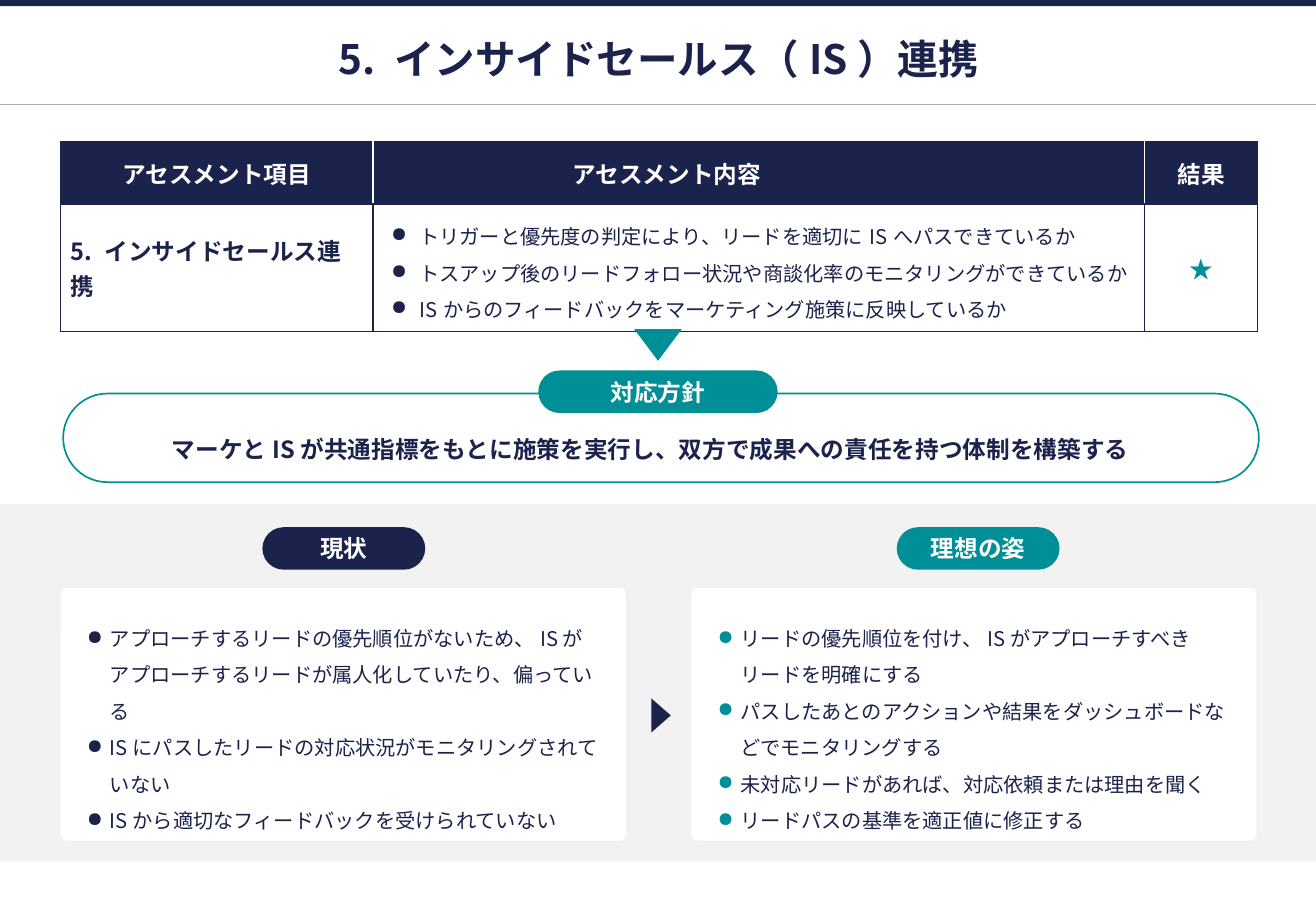
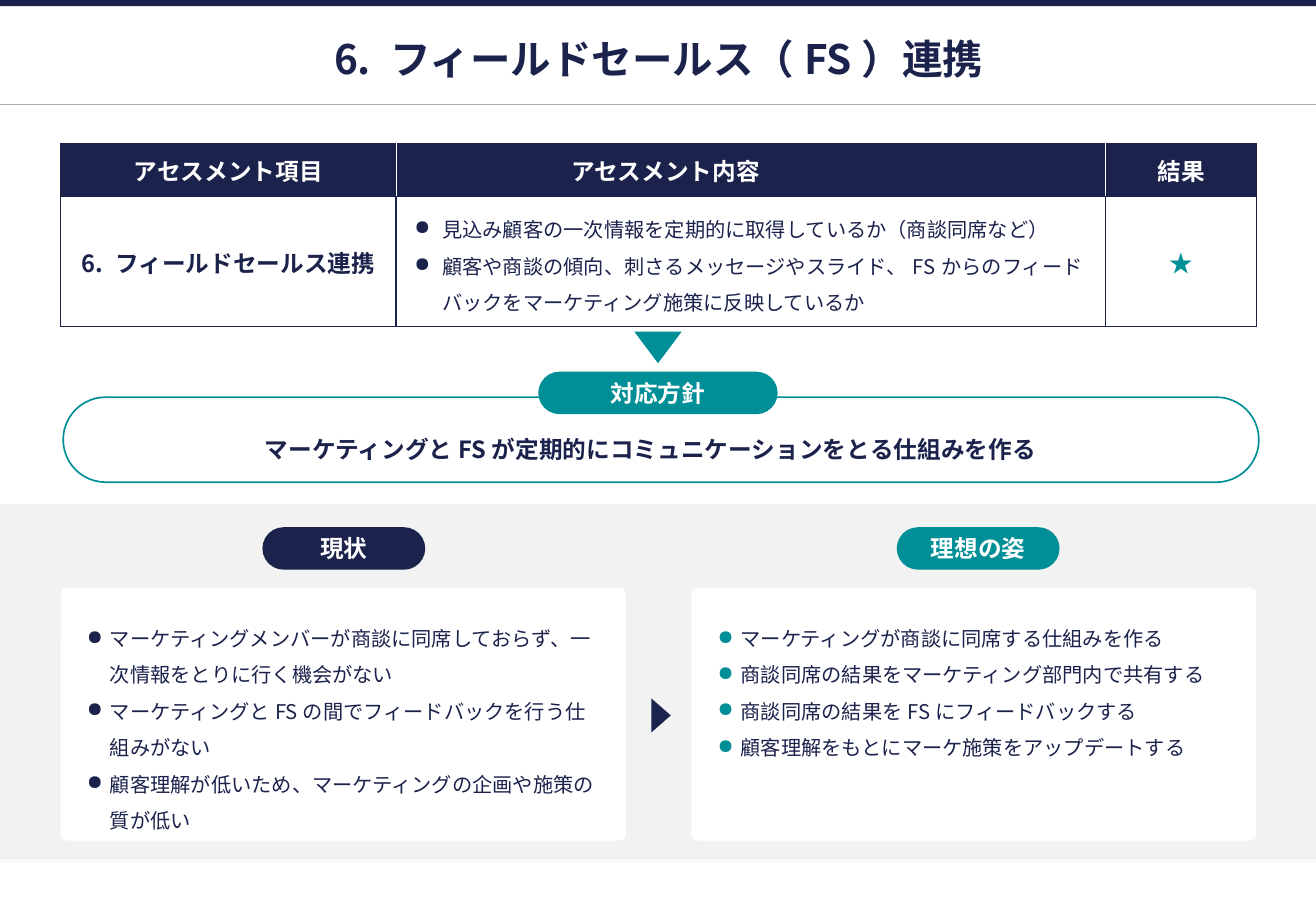
from lxml import etree
from pptx import Presentation, util as u
from pptx.dml.color import RGBColor
from pptx.enum import shapes, text
from pptx.oxml.ns import qn

# Shared style; 100 px make one inch
SCALE = 9144
WIDTH, HEIGHT = 1083, 750
FONT = "Noto Sans CJK JP"
COLORS = {"navy": "1B224C", "teal": "008F96", "white": "FFFFFF",
          "band": "F2F2F2", "rule": "AFAFAF"}
KIND = shapes.MSO_SHAPE
ALIGN = text.PP_ALIGN
ANCHOR = text.MSO_ANCHOR

SLIDES = [
    {
        "title": "5. インサイドセールス（IS）連携",
        "table_top": 117, "columns": [257, 635, 93], "rows": [51, 105],
        "heading_indent": 156,
        "item": "5. インサイドセールス連携", "item_align": ALIGN.LEFT,
        "checks": ["トリガーと優先度の判定により、リードを適切にISへパスできているか",
                   "トスアップ後のリードフォロー状況や商談化率のモニタリングができているか",
                   "ISからのフィードバックをマーケティング施策に反映しているか"],
        "arrow_top": 271, "label_top": 305, "policy_top": 324,
        "policy": "マーケとISが共通指標をもとに施策を実行し、双方で成果への責任を持つ体制を構築する",
        "current": ["アプローチするリードの優先順位がないため、ISがアプローチするリードが属人化していたり、偏っている",
                    "ISにパスしたリードの対応状況がモニタリングされていない",
                    "ISから適切なフィードバックを受けられていない"],
        "ideal": ["リードの優先順位を付け、ISがアプローチすべきリードを明確にする",
                  "パスしたあとのアクションや結果をダッシュボードなどでモニタリングする",
                  "未対応リードがあれば、対応依頼または理由を聞く",
                  "リードパスの基準を適正値に修正する"],
    },
    {
        "title": "6. フィールドセールス（FS）連携",
        "table_top": 118, "columns": [276, 584, 124], "rows": [44, 107],
        "heading_indent": 136,
        "item": "6. フィールドセールス連携", "item_align": ALIGN.CENTER,
        "checks": ["見込み顧客の一次情報を定期的に取得しているか（商談同席など）",
                   "顧客や商談の傾向、刺さるメッセージやスライド、FSからのフィードバックをマーケティング施策に反映しているか"],
        "arrow_top": 273, "label_top": 306, "policy_top": 327,
        "policy": "マーケティングとFSが定期的にコミュニケーションをとる仕組みを作る",
        "current": ["マーケティングメンバーが商談に同席しておらず、一次情報をとりに行く機会がない",
                    "マーケティングとFSの間でフィードバックを行う仕組みがない",
                    "顧客理解が低いため、マーケティングの企画や施策の質が低い"],
        "ideal": ["マーケティングが商談に同席する仕組みを作る",
                  "商談同席の結果をマーケティング部門内で共有する",
                  "商談同席の結果をFSにフィードバックする",
                  "顧客理解をもとにマーケ施策をアップデートする"],
    },
]


def px(length):
    return u.Emu(length * SCALE)


def rgb(color):
    return RGBColor.from_string(COLORS[color])


# Text
def add_bullet(properties, color):
    bullet_color = etree.SubElement(properties, qn("a:buClr"))
    etree.SubElement(bullet_color, qn("a:srgbClr"), val=COLORS[color])
    etree.SubElement(properties, qn("a:buChar"), char="●")


def write_text(frame, lines, *, size=14, color="navy", bold=True, align=ALIGN.LEFT,
               bullet=None, indent=0, hanging=0, spacing=None):
    """Write one paragraph per line into a text frame."""
    for index, line in enumerate(lines):
        paragraph = frame.paragraphs[0] if index == 0 else frame.add_paragraph()
        paragraph.alignment = align
        properties = paragraph._p.get_or_add_pPr()
        properties.set("marL", str(px(indent)))
        properties.set("indent", str(px(-hanging)))
        if bullet:
            add_bullet(properties, bullet)
        if spacing:
            paragraph.line_spacing = spacing
        run = paragraph.add_run()
        run.text = line
        run.font.name = FONT
        run.font.size = u.Pt(size)
        run.font.bold = bold
        run.font.color.rgb = rgb(color)
        etree.SubElement(run._r.get_or_add_rPr(), qn("a:ea"), typeface=FONT)


def set_frame(frame, margins, anchor=ANCHOR.MIDDLE):
    frame.word_wrap = True
    frame.vertical_anchor = anchor
    (frame.margin_left, frame.margin_top,
     frame.margin_right, frame.margin_bottom) = map(px, margins)


def add_text(slide, box, line, margins, **style):
    frame = slide.shapes.add_textbox(*map(px, box)).text_frame
    set_frame(frame, margins)
    write_text(frame, [line], align=ALIGN.CENTER, **style)


# Shapes and lines
def add_shape(slide, kind, box, fill, *, line=None, radius=None, rotation=0):
    shape = slide.shapes.add_shape(kind, *map(px, box))
    shape.shadow.inherit = False
    shape.fill.solid()
    shape.fill.fore_color.rgb = rgb(fill)
    if line:
        shape.line.color.rgb = rgb(line)
        shape.line.width = u.Pt(1)
    else:
        shape.line.fill.background()
    if radius is not None:
        shape.adjustments[0] = radius
    shape.rotation = rotation
    return shape


def add_rule(slide, top, color):
    rule = slide.shapes.add_connector(shapes.MSO_CONNECTOR.STRAIGHT,
                                      0, px(top), px(WIDTH), px(top))
    rule.line.color.rgb = rgb(color)
    rule.line.width = u.Pt(0.75)
    etree.SubElement(rule._element.spPr, qn("a:effectLst"))


def add_pill(slide, box, label, fill):
    pill = add_shape(slide, KIND.ROUNDED_RECTANGLE, box, fill, radius=0.5)
    set_frame(pill.text_frame, (10, 5, 10, 5))
    write_text(pill.text_frame, [label], color="white", align=ALIGN.CENTER)


def add_card(slide, left, lines, bullet):
    card = add_shape(slide, KIND.ROUNDED_RECTANGLE, (left, 484, 465, 208),
                     "white", radius=0.024)
    set_frame(card.text_frame, (20, 20, 20, 20), ANCHOR.TOP)
    write_text(card.text_frame, lines, size=12, bold=False, bullet=bullet,
               indent=19, hanging=19, spacing=1.5)


# Table
def set_borders(cell, colors):
    """Colours come in the order left, right, top, bottom."""
    properties = cell._tc.get_or_add_tcPr()
    for index, (side, color) in enumerate(zip("LRTB", colors)):
        width = u.Pt(0.75 if color == "white" else 1)
        border = etree.Element(qn(f"a:ln{side}"), w=str(width))
        fill = etree.SubElement(border, qn("a:solidFill"))
        etree.SubElement(fill, qn("a:srgbClr"), val=COLORS[color])
        properties.insert(index, border)


def add_assessment_table(slide, content):
    columns, rows = content["columns"], content["rows"]
    table = slide.shapes.add_table(
        len(rows), len(columns), px(50), px(content["table_top"]),
        px(sum(columns)), px(sum(rows))).table
    table.first_row = table.horz_banding = False
    for column, width in zip(table.columns, columns):
        column.width = px(width)
    for row, height in zip(table.rows, rows):
        row.height = px(height)

    center = {"align": ALIGN.CENTER}
    cells = [
        [(["アセスメント項目"], {"color": "white", **center}),
         (["アセスメント内容"], {"color": "white", "indent": content["heading_indent"]}),
         (["結果"], {"color": "white", **center})],
        [([content["item"]], {"align": content["item_align"]}),
         (content["checks"], {"size": 12, "bold": False, "bullet": "navy",
                              "indent": 30, "hanging": 23, "spacing": 1.25}),
         (["★"], {"color": "teal", **center})],
    ]
    last = len(columns) - 1
    for row_index, row in enumerate(cells):
        fill, inner = ("navy", "white") if row_index == 0 else ("white", "navy")
        for index, (lines, style) in enumerate(row):
            cell = table.cell(row_index, index)
            cell.fill.solid()
            cell.fill.fore_color.rgb = rgb(fill)
            cell.vertical_anchor = ANCHOR.MIDDLE
            cell.margin_left = cell.margin_right = px(8)
            cell.margin_top = cell.margin_bottom = px(8)
            write_text(cell.text_frame, lines, **style)
            set_borders(cell, ("navy" if index == 0 else inner,
                               "navy" if index == last else inner, "navy", "navy"))


# Slide parts
def add_page_frame(slide, title):
    add_rule(slide, 709, "band")
    add_shape(slide, KIND.RECTANGLE, (0, 0, WIDTH, 5), "navy")
    add_rule(slide, 86, "rule")
    add_text(slide, (50, 29, 984, 39), title, (4, 4, 4, 5), size=24)


def add_policy(slide, content):
    add_shape(slide, KIND.ROUNDED_RECTANGLE,
              (52, content["policy_top"], 984, 397 - content["policy_top"]),
              "white", line="teal", radius=0.5)
    add_shape(slide, KIND.ISOSCELES_TRIANGLE, (522, content["arrow_top"], 39, 26),
              "teal", rotation=180)
    add_text(slide, (61, 342, 949, 55), content["policy"], (10, 10, 10, 10))
    add_pill(slide, (443, content["label_top"], 197, 35), "対応方針", "teal")


def add_comparison(slide, content):
    add_shape(slide, KIND.RECTANGLE, (0, 415, WIDTH, 293), "band")
    sides = [(50, 216, "現状", "current", "navy"),
             (569, 738, "理想の姿", "ideal", "teal")]
    for card_left, pill_left, label, key, color in sides:
        add_card(slide, card_left, content[key], color)
        add_pill(slide, (pill_left, 434, 134, 35), label, color)
    add_shape(slide, KIND.ISOSCELES_TRIANGLE, (530, 581, 28, 16), "navy", rotation=90)


def main():
    presentation = Presentation()
    presentation.slide_width, presentation.slide_height = px(WIDTH), px(HEIGHT)
    for content in SLIDES:
        slide = presentation.slides.add_slide(presentation.slide_layouts[6])
        add_page_frame(slide, content["title"])
        add_assessment_table(slide, content)
        add_policy(slide, content)
        add_comparison(slide, content)
    presentation.save("out.pptx")


if __name__ == "__main__":
    main()
